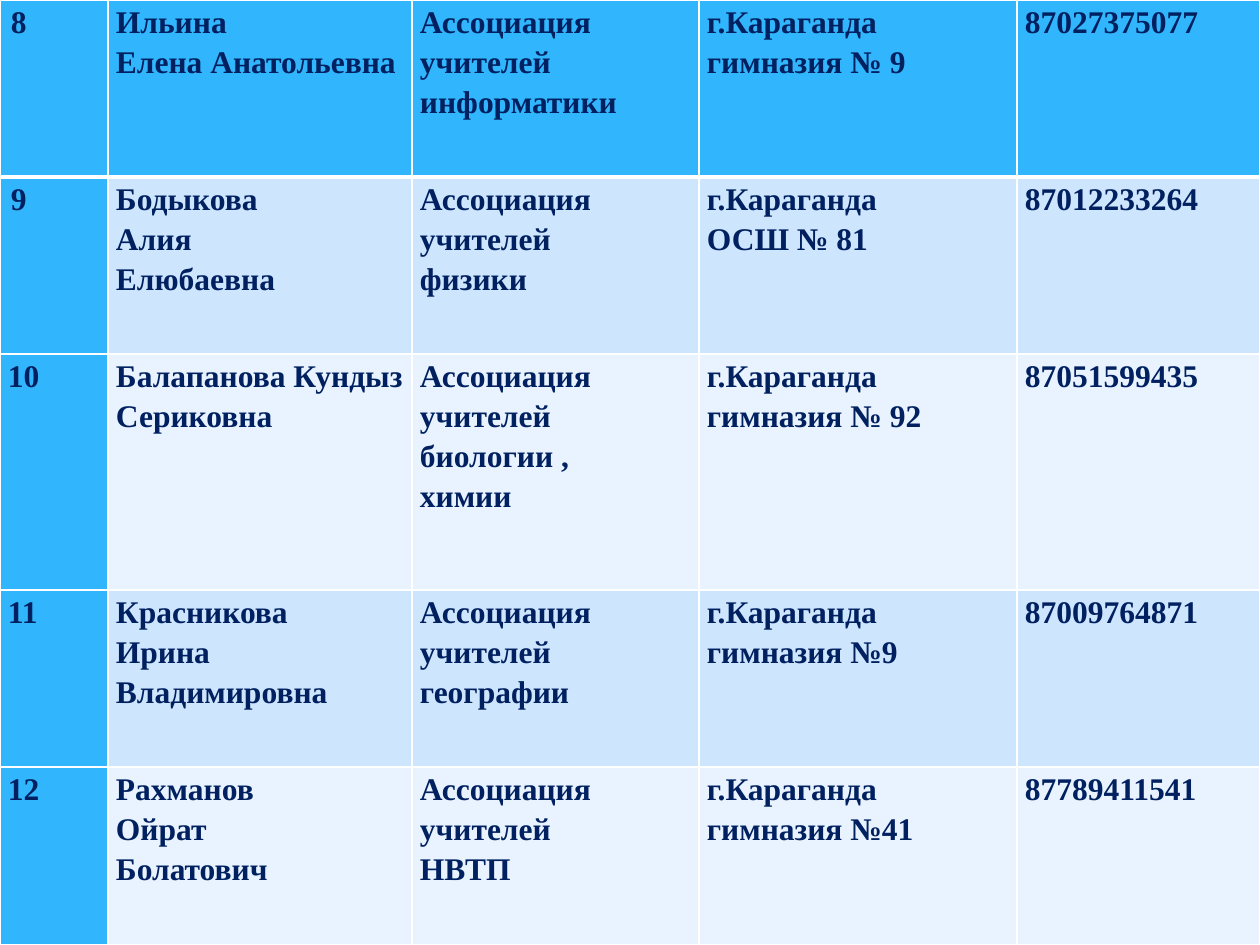
import pptx
import pptx.util
import pptx.dml.color
import pptx.oxml.ns
import lxml.etree

RGB = pptx.dml.color.RGBColor
BLUE = RGB(0x31, 0xB6, 0xFD)
PALE = RGB(0xCE, 0xE5, 0xFE)
LIGHT = RGB(0xE8, 0xF3, 0xFF)
NAVY = RGB(0x00, 0x20, 0x60)
WHITE = RGB(0xFF, 0xFF, 0xFF)
PX = 914400 // 126

COLS = [108, 304, 287, 318, 243]
ROWS = [177, 177, 236, 177, 178]
FONT = {"name": "Times New Roman", "size": pptx.util.Pt(18), "bold": True}
INSET = {"margin_left": 8 * PX, "margin_right": 8 * PX,
         "margin_top": 0, "margin_bottom": 0}

# Each line break starts a new paragraph
DATA = [
    ["8", "Ильина\nЕлена Анатольевна", "Ассоциация\nучителей\nинформатики",
     "г.Караганда гимназия № 9", "87027375077"],
    ["9", "Бодыкова\nАлия\nЕлюбаевна", "Ассоциация\nучителей\nфизики",
     "г.Караганда\nОСШ № 81", "87012233264"],
    ["10", "Балапанова Кундыз Сериковна", "Ассоциация\nучителей\nбиологии ,\nхимии",
     "г.Караганда гимназия № 92", "87051599435"],
    ["11", "Красникова\nИрина Владимировна", "Ассоциация\nучителей\nгеографии",
     "г.Караганда\nгимназия №9", "87009764871"],
    ["12", "Рахманов\nОйрат\nБолатович", "Ассоциация\nучителей\nНВТП",
     "г.Караганда\nгимназия №41", "87789411541"],
]


def edge(cell, side, width):
    """Draw one white border of a cell, width in points."""
    qn = pptx.oxml.ns.qn
    line = lxml.etree.SubElement(cell._tc.get_or_add_tcPr(), qn("a:ln" + side),
                                 w=str(pptx.util.Pt(width)))
    fill = lxml.etree.SubElement(line, qn("a:solidFill"))
    lxml.etree.SubElement(fill, qn("a:srgbClr"), val=str(WHITE))


# Slide
deck = pptx.Presentation()
deck.slide_width = pptx.util.Inches(10)
deck.slide_height = pptx.util.Inches(7.5)
slide = deck.slides.add_slide(deck.slide_layouts[6])

# Table grid
table = slide.shapes.add_table(len(ROWS), len(COLS), 0, 0,
                               sum(COLS) * PX, sum(ROWS) * PX).table
for col, width in zip(table.columns, COLS):
    col.width = width * PX
for row, height in zip(table.rows, ROWS):
    row.height = height * PX

# Cells: blue header row and first column, banded body
for r, texts in enumerate(DATA):
    for c, text in enumerate(texts):
        cell = table.cell(r, c)
        for key, value in INSET.items():
            setattr(cell, key, value)
        for side in "LRTB":
            thick = (r, side) in [(0, "B"), (1, "T")]
            edge(cell, side, 3 if thick else 1)
        cell.fill.solid()
        band = PALE if r % 2 else LIGHT
        cell.fill.fore_color.rgb = BLUE if r == 0 or c == 0 else band

        cell.text = text
        for para in cell.text_frame.paragraphs:
            para.line_spacing = 1.15
            # One-digit numbers sit slightly further in
            if len(text) == 1:
                para._p.get_or_add_pPr().set("indent", str(3 * PX))
            for run in para.runs:
                for key, value in FONT.items():
                    setattr(run.font, key, value)
                run.font.color.rgb = NAVY

deck.save("out.pptx")
